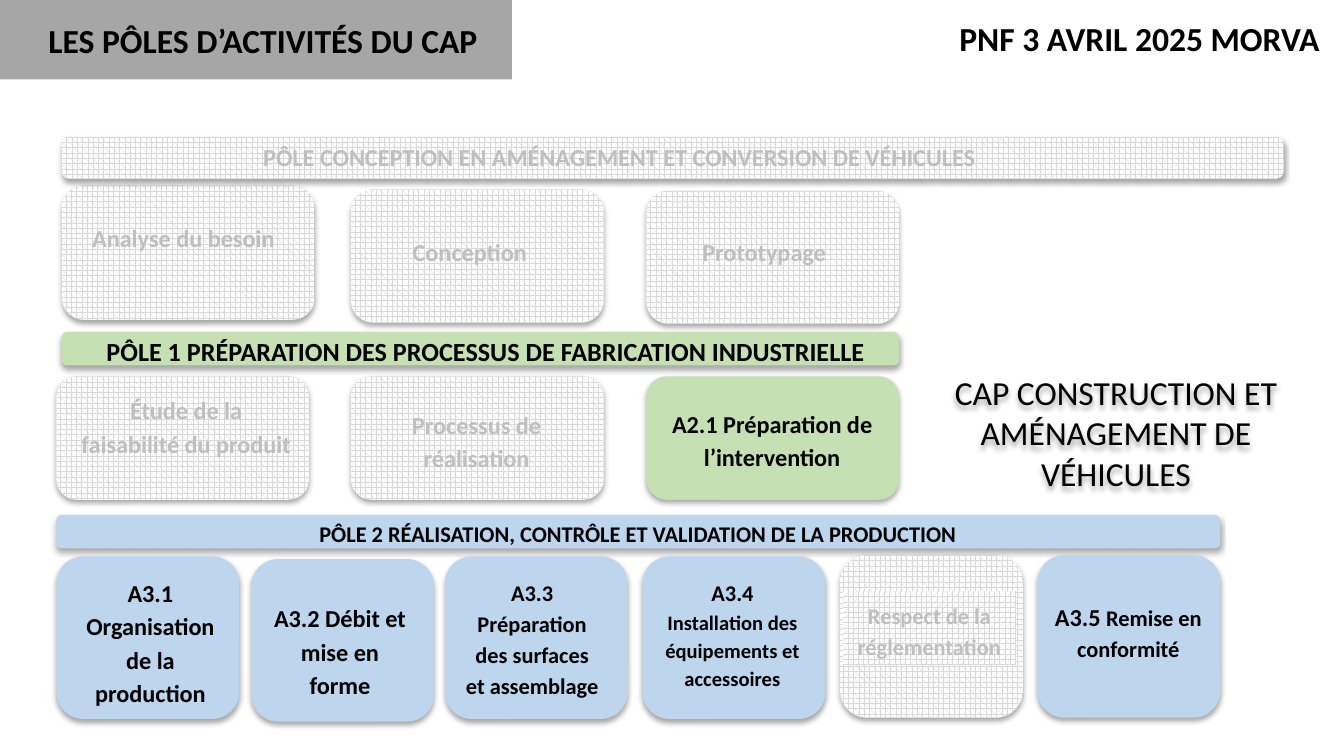
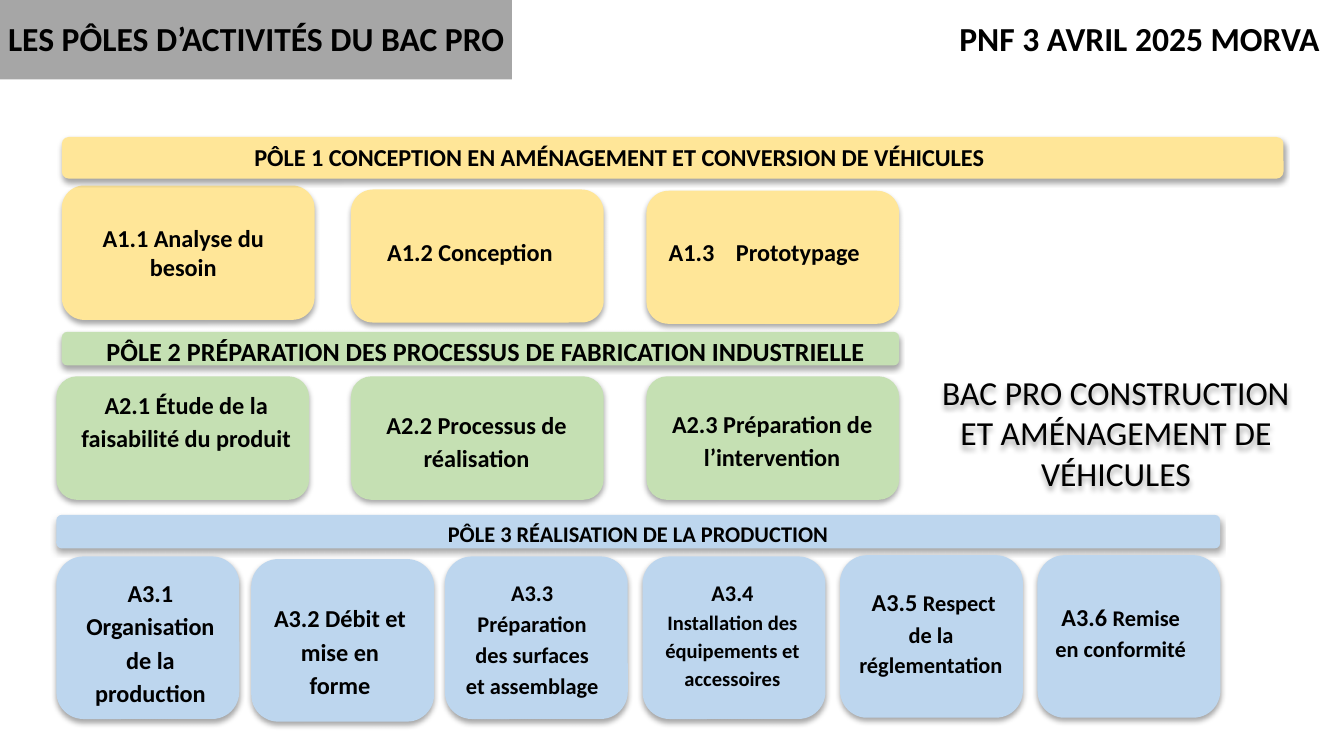
from dataclasses import dataclass
from typing import Optional

from lxml import etree
from pptx import Presentation
from pptx.dml.color import RGBColor
from pptx.enum import dml, shapes, text
from pptx.oxml.ns import qn
from pptx.util import Pt

FONT = "Calibri"
BLACK = RGBColor(0, 0, 0)
WHITE = RGBColor(255, 255, 255)
BAND_GREY = RGBColor(0xA6, 0xA6, 0xA6)
MUTED_TEXT = RGBColor(0xBF, 0xBF, 0xBF)
MUTED_GRID = RGBColor(0xD9, 0xD9, 0xD9)
YELLOW = RGBColor(0xFF, 0xE6, 0x98)
GREEN = RGBColor(0xC5, 0xE0, 0xB3)
BLUE = RGBColor(0xBD, 0xD6, 0xEE)
MUTED = None  # a muted part has a grid pattern in place of a colour

EVENT = "PNF 3 AVRIL 2025 MORVA"

# Boxes are left, top, width, height in points; a label box is relative to its card.
DESIGN_BAR = (33.1, 73.4, 654.5, 22.3)
DESIGN_BAR_LABEL = (-14.4, -2.9, 625.7, 24.5)
PREPARATION_BAR = (33.1, 177.8, 448.6, 18)
PREPARATION_BAR_LABEL = (2.9, -4.3, 448.6, 48.2)
PRODUCTION_BAR = (30.2, 275.8, 623.5, 18)
DIPLOMA_BOX = (491, 195.8, 213.8, 72.7)

DESIGN_CARDS = [(33.1, 99.4, 135.4, 72), (188, 101.5, 135.4, 71.3), (346.3, 102.2, 135.4, 71.3)]
DESIGN_LABELS = [(1.4, 16.6, 127.4, 38.9), (0, 22.3, 127.4, 44.6), (3.6, 21.6, 118.8, 23)]
PREPARATION_CARDS = [(left, 201.6, 135.4, 66.2) for left in (30.2, 188, 346.3)]
PREPARATION_LABELS = [(5.8, 4.3, 127.4, 60.5), (3.6, 12.2, 127.4, 42.5), (3.6, 11.5, 127.4, 42.5)]
PRODUCTION_CARDS = [
    (left, top, 98, 87.1)
    for left, top in ((30.2, 298.1), (134.6, 299.5), (238.3, 298.1),
                      (344.2, 298.1), (450, 297.4), (555.8, 297.4))
]
PRODUCTION_LABELS = [
    (7.2, 5.8, 86.4, 60.5), (3.6, 18, 87.8, 42.5), (2.9, 6.5, 87.8, 73.4),
    (4.3, 6.5, 87.8, 69.1), (1.4, 19.4, 93, 39.6), (2.2, 19.4, 93, 41),
]


@dataclass
class Card:
    runs: list  # pairs of text and size
    color: Optional[RGBColor] = MUTED
    label: Optional[tuple] = None  # replaces the usual label box of the row


@dataclass
class Pole:
    title: str
    color: Optional[RGBColor]
    cards: list


def points(box):
    return [Pt(value) for value in box]


def inside(box, label):
    """Turn a label box relative to a card into a box on the slide."""
    return (box[0] + label[0], box[1] + label[1], label[2], label[3])


def paint(shape, color):
    if color is MUTED:
        shape.fill.patterned()
        shape.fill.pattern = dml.MSO_PATTERN.SPHERE
        shape.fill.fore_color.rgb = MUTED_GRID
        shape.fill.back_color.rgb = WHITE
    else:
        shape.fill.solid()
        shape.fill.fore_color.rgb = color


def add_shadow(shape):
    shape.shadow.inherit = False
    effects = shape.element.spPr.find(qn("a:effectLst"))
    shadow = etree.SubElement(effects, qn("a:outerShdw"), blurRad=str(Pt(3.1)),
                              dist=str(Pt(1.8)), dir="5400000", algn="t", rotWithShape="0")
    color = etree.SubElement(shadow, qn("a:srgbClr"), val=str(BLACK))
    etree.SubElement(color, qn("a:alpha"), val="35000")


def write(shape, runs, color=BLACK, bold=True, spacing=None,
          align=text.PP_ALIGN.CENTER, wrap=True, anchor=text.MSO_ANCHOR.TOP):
    frame = shape.text_frame
    frame.word_wrap = wrap
    frame.auto_size = text.MSO_AUTO_SIZE.NONE
    frame.vertical_anchor = anchor
    paragraph = frame.paragraphs[0]
    if any("\t" in words for words, _ in runs):
        stops = etree.SubElement(paragraph._p.get_or_add_pPr(), qn("a:tabLst"))
        etree.SubElement(stops, qn("a:tab"), pos=str(Pt(36)), algn="l")
    paragraph.alignment = align
    if spacing:
        paragraph.line_spacing = spacing
    for words, size in runs:
        run = paragraph.add_run()
        run.text = words
        run.font.name = FONT
        run.font.size = Pt(size)
        run.font.bold = bold
        run.font.color.rgb = color


def add_plate(container, box, color):
    """Add a rounded plate with a soft shadow."""
    plate = container.add_shape(shapes.MSO_SHAPE.FLOWCHART_ALTERNATE_PROCESS, *points(box))
    paint(plate, color)
    plate.line.fill.background()
    add_shadow(plate)
    return plate


def text_color(color):
    return MUTED_TEXT if color is MUTED else BLACK


def add_header(slide, title, box):
    band = slide.shapes.add_shape(shapes.MSO_SHAPE.RECTANGLE, *points((0, 0, 274.3, 42.5)))
    paint(band, BAND_GREY)
    band.line.fill.background()
    band.shadow.inherit = False
    event = slide.shapes.add_textbox(*points((506.9, 5.8, 213.1, 28.8)))
    paint(event, WHITE)
    write(event, [(EVENT, 18)], align=text.PP_ALIGN.LEFT)

    heading = slide.shapes.title
    heading.element.getparent().append(heading.element)  # in front of the band
    heading.left, heading.top, heading.width, heading.height = points(box)
    write(heading, [(title, 18)], align=text.PP_ALIGN.LEFT, wrap=False)


def add_bar(slide, box, label, pole, size, spacing=1.15):
    add_plate(slide.shapes, box, pole.color)
    caption = slide.shapes.add_textbox(*points(inside(box, label)))
    write(caption, [(pole.title, size)], text_color(pole.color), spacing=spacing)


def add_cards(slide, boxes, labels, cards, spacing=1.15, filled=False):
    for box, label, card in zip(boxes, labels, cards):
        group = slide.shapes.add_group_shape()
        add_plate(group.shapes, box, card.color)
        caption = group.shapes.add_textbox(*points(inside(box, card.label or label)))
        if filled:
            paint(caption, card.color)
        write(caption, card.runs, text_color(card.color), spacing=spacing)


def add_production_bar(slide, pole):
    bar = add_plate(slide.shapes, PRODUCTION_BAR, pole.color)
    write(bar, [(pole.title, 12)], spacing=1.15, anchor=text.MSO_ANCHOR.MIDDLE)


def add_diploma(slide, name):
    diploma = slide.shapes.add_textbox(*points(DIPLOMA_BOX))
    diploma.fill.background()
    add_shadow(diploma)
    write(diploma, [(name, 18)], bold=False)


def add_poles_slide(presentation, title, title_box, diploma, poles):
    slide = presentation.slides.add_slide(presentation.slide_layouts[5])
    design, preparation, production = poles
    add_header(slide, title, title_box)
    add_cards(slide, DESIGN_CARDS, DESIGN_LABELS, design.cards, spacing=None)
    add_bar(slide, DESIGN_BAR, DESIGN_BAR_LABEL, design, 13)
    add_cards(slide, PREPARATION_CARDS, PREPARATION_LABELS, preparation.cards)
    add_bar(slide, PREPARATION_BAR, PREPARATION_BAR_LABEL, preparation, 14)
    add_production_bar(slide, production)
    add_cards(slide, PRODUCTION_CARDS, PRODUCTION_LABELS, production.cards, filled=True)
    add_diploma(slide, diploma)


def plain_cards(color, *names):
    return [Card([(name, 13)], color) for name in names]


COMMON_PRODUCTION = plain_cards(BLUE, "A3.1 Organisation de la production",
                                "A3.2 Débit et mise en forme") + [
    Card([("A3.3 Préparation des surfaces et assemblage", 12)], BLUE),
    Card([("A3.4 ", 12), ("Installation des équipements et accessoires", 11)], BLUE),
]

CAP_POLES = [
    Pole("PÔLE CONCEPTION EN AMÉNAGEMENT ET CONVERSION DE VÉHICULES", MUTED,
         plain_cards(MUTED, "Analyse du besoin", "Conception", "Prototypage")),
    Pole("PÔLE 1 PRÉPARATION DES PROCESSUS DE FABRICATION INDUSTRIELLE", GREEN,
         plain_cards(MUTED, "Étude de la faisabilité du produit", "Processus de réalisation")
         + plain_cards(GREEN, "A2.1 Préparation de l’intervention")),
    Pole("PÔLE 2 RÉALISATION, CONTRÔLE ET VALIDATION DE LA PRODUCTION", BLUE,
         COMMON_PRODUCTION + [
             Card([("Respect de la réglementation", 12)]),
             Card([("A3.5 ", 13), ("Remise en conformité", 12)], BLUE),
         ]),
]

BAC_PRO_POLES = [
    Pole("PÔLE 1 CONCEPTION EN AMÉNAGEMENT ET CONVERSION DE VÉHICULES", YELLOW,
         plain_cards(YELLOW, "A1.1 Analyse du besoin", "A1.2 Conception", "A1.3\tPrototypage")),
    Pole("PÔLE 2 PRÉPARATION DES PROCESSUS DE FABRICATION INDUSTRIELLE", GREEN,
         [Card([("A2.1 Étude de la faisabilité du produit", 13)], GREEN, (5.8, 1.4, 127.4, 60.5))]
         + plain_cards(GREEN, "A2.2 Processus de réalisation",
                       "A2.3 Préparation de l’intervention")),
    Pole("PÔLE 3 RÉALISATION DE LA PRODUCTION", BLUE,
         COMMON_PRODUCTION + [
             Card([(" A3.5 ", 13), ("Respect de la réglementation", 12)], BLUE,
                  (2.2, 11.5, 93, 57.6)),
             Card([("A3.6 ", 13), ("Remise en conformité", 12)], BLUE, (0.7, 19.4, 87.8, 41)),
         ]),
]


def main():
    presentation = Presentation()
    presentation.slide_width, presentation.slide_height = Pt(720), Pt(405)
    add_poles_slide(presentation, "LES PÔLES D’ACTIVITÉS DU CAP", (18.7, 7.2, 245.5, 28.8),
                    "CAP CONSTRUCTION ET AMÉNAGEMENT DE VÉHICULES", CAP_POLES)
    add_poles_slide(presentation, "LES PÔLES D’ACTIVITÉS DU BAC PRO", (-2.9, 5.8, 283, 28.8),
                    "BAC PRO CONSTRUCTION ET AMÉNAGEMENT DE VÉHICULES", BAC_PRO_POLES)
    presentation.save("out.pptx")


if __name__ == "__main__":
    main()
